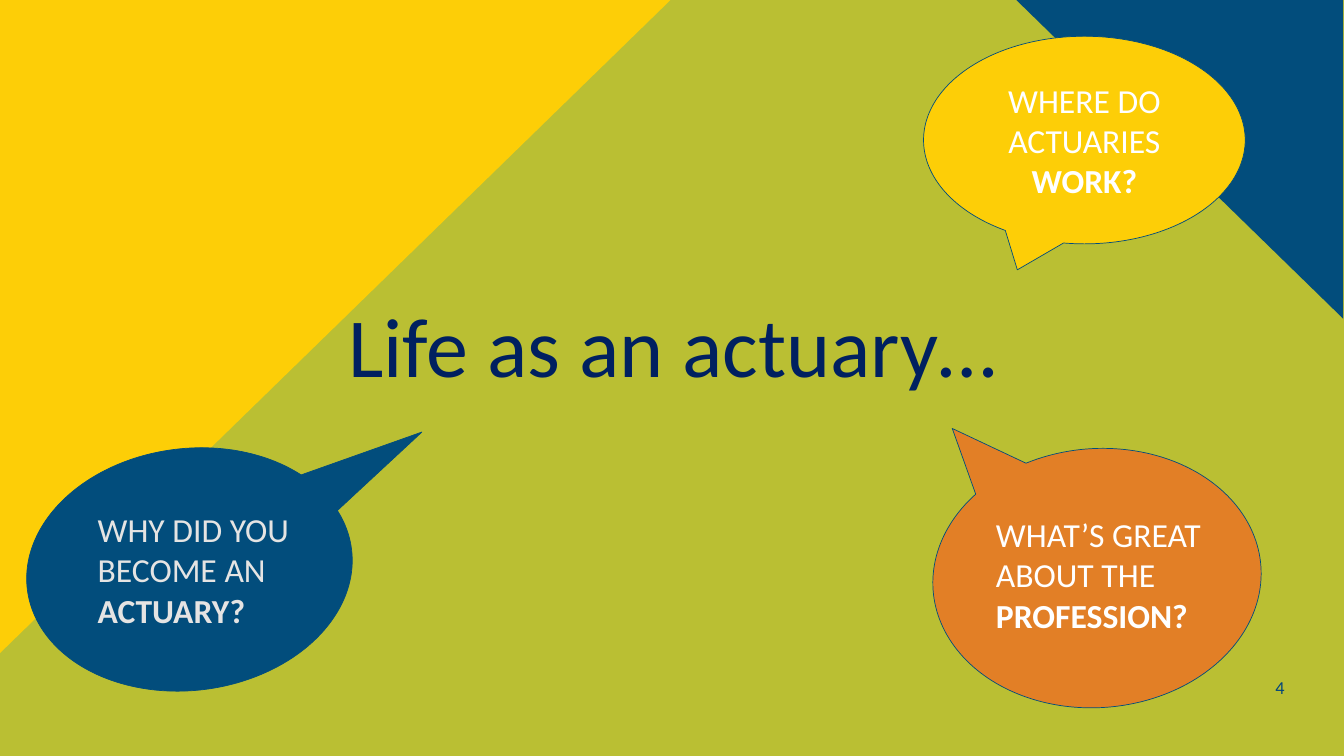
from dataclasses import dataclass

from pptx import Presentation
from pptx.dml.color import RGBColor
from pptx.enum.shapes import MSO_SHAPE as Preset
from pptx.enum.text import MSO_ANCHOR as Anchor, PP_ALIGN as Align
from pptx.util import Inches, Pt

COLORS = {
    "lime": "BABF33", "yellow": "FDCE07", "blue": "024D7C", "orange": "E27F26",
    "navy": "002060", "number": "02457C", "white": "FFFFFF", "pale": "E5E4E3",
}


@dataclass(frozen=True)
class Box:
    left: float
    top: float
    width: float
    height: float

    def lengths(self):
        return [Inches(n) for n in (self.left, self.top, self.width, self.height)]


@dataclass(frozen=True)
class Panel:
    preset: Preset
    box: Box
    color: str
    rotation: float = 0
    tip: tuple[float, float] | None = None
    outlined: bool = False


@dataclass(frozen=True)
class Caption:
    box: Box
    text: str
    color: str
    size: float = 24
    bold_end: str = ""
    align: Align = Align.LEFT
    anchor: Anchor = Anchor.TOP
    line_spacing: float = 1.0


WORK_BOX = Box(9.16, 0.36, 3.19, 2.06)
PANELS = [
    Panel(Preset.RECTANGLE, Box(0, 0, 13.33, 7.5), "lime"),
    Panel(Preset.RIGHT_TRIANGLE, Box(-0.26, -0.09, 6.82, 7), "yellow", 90),
    Panel(Preset.RIGHT_TRIANGLE, Box(10.08, 0, 3.24, 3.16), "blue", 180),
    Panel(Preset.OVAL_CALLOUT, Box(9.25, 4.45, 3.26, 2.57), "orange", 175.7, (0.405, 0.618), True),
    Panel(Preset.OVAL_CALLOUT, Box(0.26, 4.45, 3.24, 2.4), "blue", 352.9, (0.758, -0.445), True),
]
WORK_BUBBLE = Panel(Preset.OVAL_CALLOUT, WORK_BOX, "yellow", outlined=True)
WORK_QUESTION = Caption(WORK_BOX, "WHERE DO ACTUARIES ", "white", bold_end="WORK?",
                        align=Align.CENTER, anchor=Anchor.MIDDLE)
CAPTIONS = [
    Caption(Box(3.04, 2.98, 7.26, 1.54), "Life as an actuary…", "navy", 60,
            align=Align.CENTER, line_spacing=0.9),
    Caption(Box(12.31, 6.74, 0.53, 0.16), "4", "number", 13,
            align=Align.RIGHT, anchor=Anchor.MIDDLE),
    Caption(Box(9.78, 5.05, 2.68, 1.31), "WHAT’S GREAT ABOUT THE ", "white", bold_end="PROFESSION?"),
    Caption(Box(0.87, 5, 3.09, 1.31), "WHY DID YOU BECOME AN ", "pale", bold_end="ACTUARY?"),
]


def rgb(name: str) -> RGBColor:
    return RGBColor.from_string(COLORS[name])


def draw_panel(slide, panel: Panel):
    shape = slide.shapes.add_shape(panel.preset, *panel.box.lengths())
    shape.shadow.inherit = False
    shape.rotation = panel.rotation
    shape.fill.solid()
    shape.fill.fore_color.rgb = rgb(panel.color)
    if panel.outlined:
        shape.line.color.rgb = rgb("blue")
        shape.line.width = Pt(0.5)
    else:
        shape.line.fill.background()
    if panel.tip:
        shape.adjustments[0], shape.adjustments[1] = panel.tip
    return shape


def write_caption(frame, caption: Caption) -> None:
    frame.word_wrap = True
    frame.vertical_anchor = caption.anchor
    paragraph = frame.paragraphs[0]
    paragraph.alignment = caption.align
    paragraph.line_spacing = caption.line_spacing
    paragraph.font.name = "Calibri"
    paragraph.font.size = Pt(caption.size)
    paragraph.font.color.rgb = rgb(caption.color)
    paragraph.add_run().text = caption.text
    if caption.bold_end:
        ending = paragraph.add_run()
        ending.text = caption.bold_end
        ending.font.bold = True


def main() -> None:
    """Build the slide of questions about life as an actuary."""
    deck = Presentation()
    deck.slide_width, deck.slide_height = Inches(13.33), Inches(7.5)
    slide = deck.slides.add_slide(deck.slide_layouts[6])
    for panel in PANELS:
        draw_panel(slide, panel)
    write_caption(draw_panel(slide, WORK_BUBBLE).text_frame, WORK_QUESTION)
    for caption in CAPTIONS:
        write_caption(slide.shapes.add_textbox(*caption.box.lengths()).text_frame, caption)
    deck.save("out.pptx")


if __name__ == "__main__":
    main()
